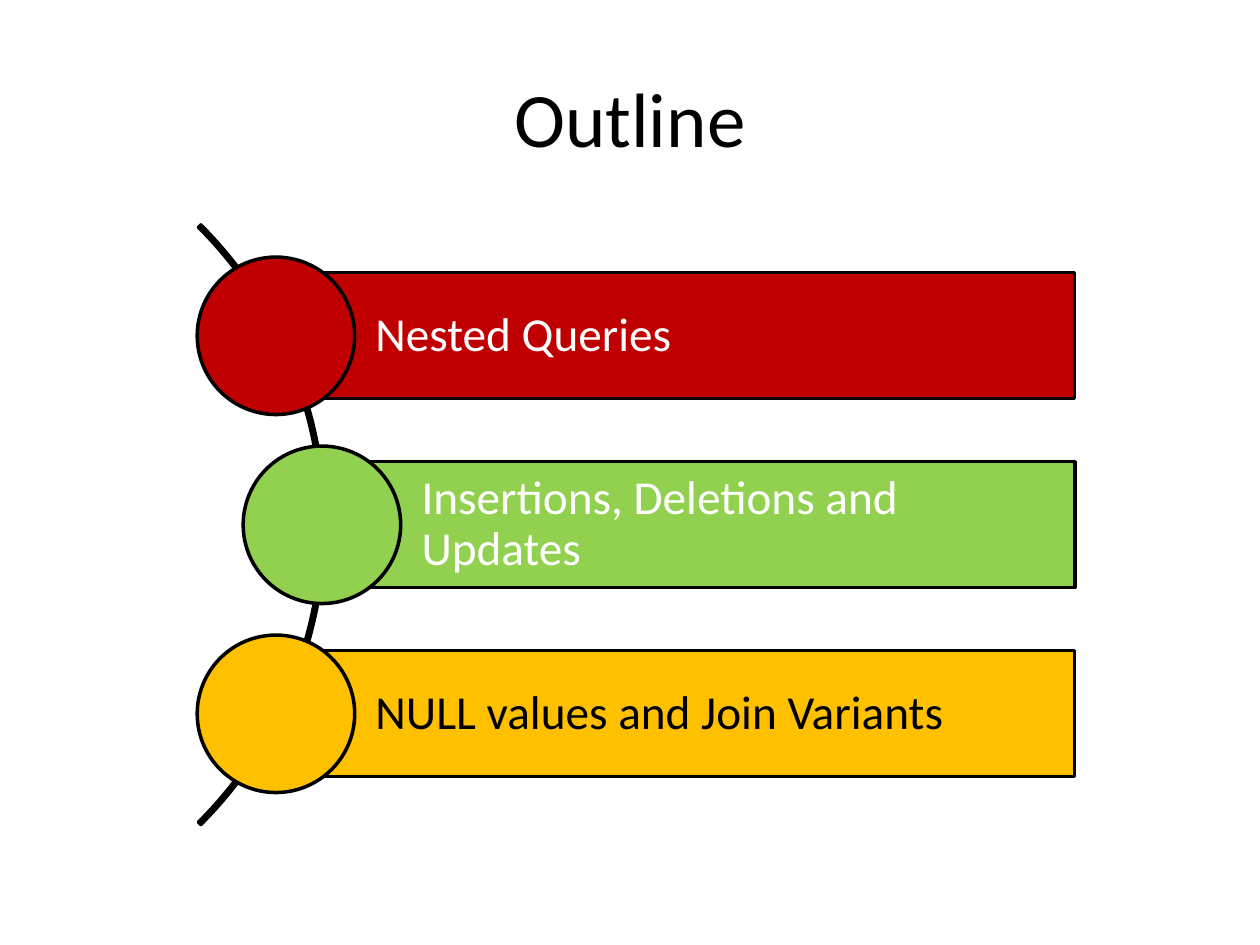
from pptx import Presentation
from pptx.dml.color import RGBColor
from pptx.enum import shapes, text
from pptx import util as u

BLACK = RGBColor(0, 0, 0)
WHITE = RGBColor(255, 255, 255)
RED = RGBColor(0xC0, 0, 0)
GREEN = RGBColor(0x92, 0xD0, 0x50)
AMBER = RGBColor(0xFF, 0xC0, 0)

MID_ROW, PITCH = 8.33, 3
BAR_RIGHT, BAR_H, DOT = 17.06, 2, 2.5
ARC_COL, ARC_D = -1.57, 13.46
TOPICS = [
    ("Nested Queries", 4.38, RED, WHITE),
    ("Insertions, Deletions and Updates", 5.11, GREEN, WHITE),
    ("NULL values and Join Variants", 4.38, AMBER, BLACK),
]


class Deck:
    """Draws styled elements on a slide grid of 20 columns by 15 rows."""

    font = "Calibri"
    line_width = u.Pt(2)

    def __init__(self, prs):
        self.cell_w = prs.slide_width / 20
        self.cell_h = prs.slide_height / 15
        self.slide = prs.slides.add_slide(prs.slide_layouts[6])

    def box(self, col, row, cols, rows):
        return (round(col * self.cell_w), round(row * self.cell_h),
                round(cols * self.cell_w), round(rows * self.cell_h))

    def label(self, sp, words, size, color, align):
        tf = sp.text_frame
        tf.word_wrap = True
        tf.vertical_anchor = text.MSO_ANCHOR.MIDDLE
        p = tf.paragraphs[0]
        p.text = words
        p.alignment = align
        p.font.name = self.font
        p.font.size = u.Pt(size)
        p.font.color.rgb = color
        return p

    def title(self, words, *cells):
        sp = self.slide.shapes.add_textbox(*self.box(*cells))
        self.label(sp, words, 44, BLACK, text.PP_ALIGN.CENTER)

    def shape(self, kind, *cells, fill=None):
        sp = self.slide.shapes.add_shape(kind, *self.box(*cells))
        sp.shadow.inherit = False
        sp.line.color.rgb = BLACK
        sp.line.width = self.line_width
        if fill is None:
            sp.fill.background()
        else:
            sp.fill.solid()
            sp.fill.fore_color.rgb = fill
        return sp

    def arc(self, col, row, size):
        sp = self.shape(shapes.MSO_SHAPE.BLOCK_ARC,
                        col - size / 2, row - size / 2, size, size)
        for i, value in enumerate((189, 27, 0.004)):
            sp.adjustments[i] = value

    def bar(self, words, col, row, fill, color):
        sp = self.shape(shapes.MSO_SHAPE.RECTANGLE, col, row - BAR_H / 2,
                        BAR_RIGHT - col, BAR_H, fill=fill)
        tf = sp.text_frame
        tf.margin_left = u.Inches(0.79)
        tf.margin_top = tf.margin_right = tf.margin_bottom = u.Inches(0.07)
        p = self.label(sp, words, 27, color, text.PP_ALIGN.LEFT)
        p.line_spacing = 0.9

    def dot(self, col, row, fill):
        self.shape(shapes.MSO_SHAPE.OVAL, col - DOT / 2, row - DOT / 2,
                   DOT, DOT, fill=fill)


def main():
    prs = Presentation()
    prs.slide_width, prs.slide_height = u.Inches(10), u.Inches(7.5)
    deck = Deck(prs)
    deck.title("Outline", 1, 0.6, 18, 2.5)
    deck.arc(ARC_COL, MID_ROW, ARC_D)
    for i, (words, col, fill, color) in enumerate(TOPICS):
        row = MID_ROW + (i - 1) * PITCH
        deck.bar(words, col, row, fill, color)
        deck.dot(col, row, fill)
    prs.save("out.pptx")


if __name__ == "__main__":
    main()
